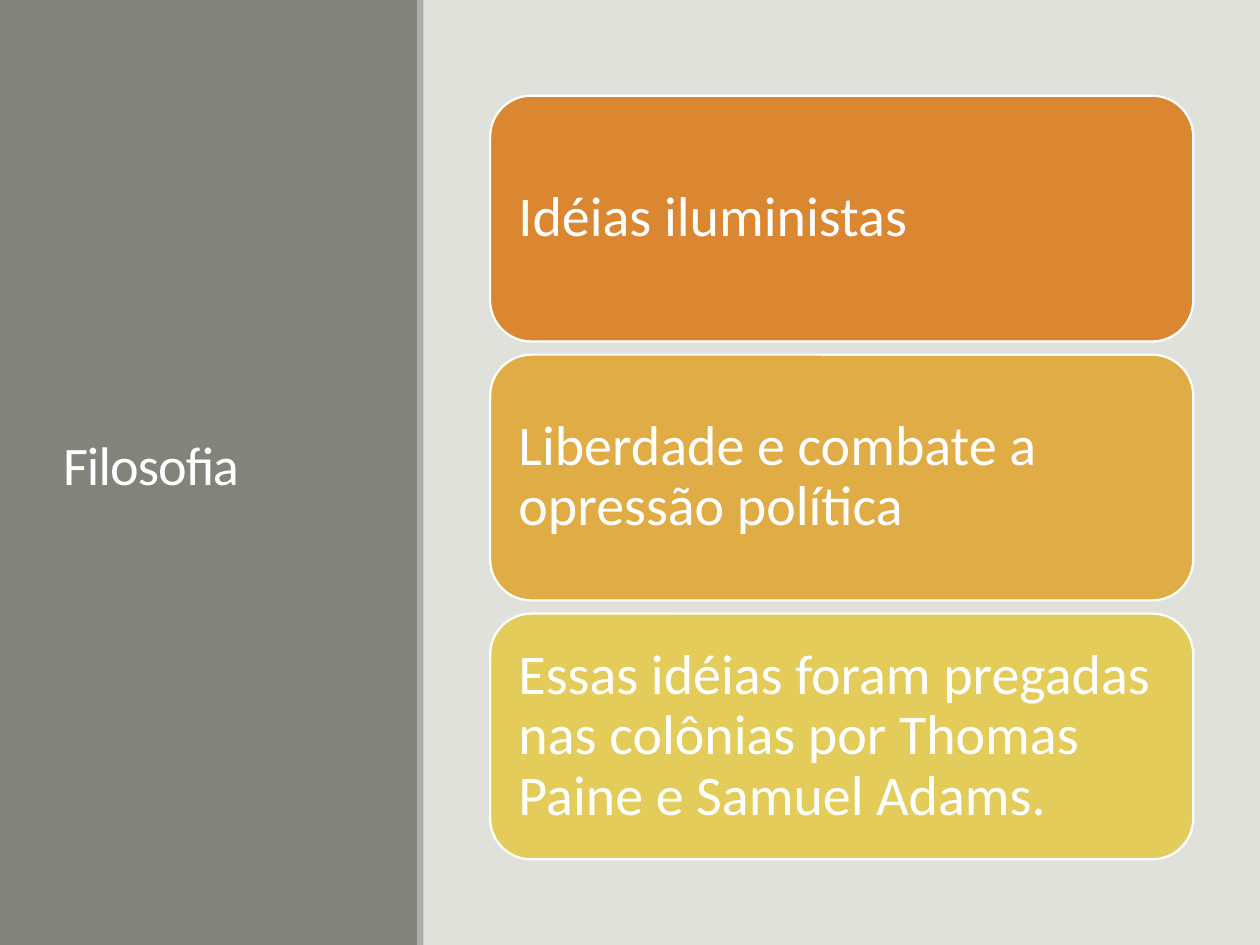
from pptx import Presentation
from pptx.dml.color import RGBColor
from pptx.enum.shapes import MSO_SHAPE
from pptx.enum.text import MSO_ANCHOR, MSO_AUTO_SIZE, PP_ALIGN
from pptx.util import Inches, Pt

WHITE = RGBColor(0xFF, 0xFF, 0xFF)
PAPER = RGBColor(0xE1, 0xE1, 0xDB)
STONE = RGBColor(0x82, 0x84, 0x7C)
EDGE = RGBColor(0xAC, 0xAD, 0xA8)
ORANGE = RGBColor(0xDB, 0x86, 0x31)
AMBER = RGBColor(0xDF, 0xAC, 0x45)
YELLOW = RGBColor(0xE3, 0xCC, 0x5A)

TITLE = "Filosofia"
IDEAS = [
    ("Idéias iluministas", ORANGE),
    ("Liberdade e combate a opressão política", AMBER),
    ("Essas idéias foram pregadas nas colônias por Thomas Paine e Samuel Adams.", YELLOW),
]

SLIDE_W, SLIDE_H = 10, 7.5
SIDEBAR_W, EDGE_W = 3.32, 0.05
CARD_LEFT, CARD_TOP, CARD_W, CARD_H = 3.89, 0.76, 5.58, 1.95
CARD_GAP = 0.105
CARD_INSET = Inches(0.13)


def add_block(slide, preset, left, top, width, height, color):
    block = slide.shapes.add_shape(
        preset, Inches(left), Inches(top), Inches(width), Inches(height))
    block.shadow.inherit = False
    block.fill.solid()
    block.fill.fore_color.rgb = color
    block.line.fill.background()
    return block


def write(frame, text, size, line_spacing):
    frame.word_wrap = True
    frame.auto_size = MSO_AUTO_SIZE.NONE
    frame.vertical_anchor = MSO_ANCHOR.MIDDLE
    paragraph = frame.paragraphs[0]
    paragraph.alignment = PP_ALIGN.LEFT
    paragraph.line_spacing = line_spacing
    run = paragraph.add_run()
    run.text = text
    run.font.name = "Calibri"
    run.font.size = Pt(size)
    run.font.color.rgb = WHITE
    return run


def add_sidebar(slide):
    add_block(slide, MSO_SHAPE.RECTANGLE, 0, 0, SIDEBAR_W, SLIDE_H, STONE)
    heading = slide.shapes.title
    heading.left, heading.top = Inches(0.4), Inches(0.57)
    heading.width, heading.height = Inches(2.53), Inches(6.31)
    run = write(heading.text_frame, TITLE, 31, 0.85)
    run._r.get_or_add_rPr().set("spc", "-50")
    slide.shapes._spTree.append(heading._element)
    add_block(slide, MSO_SHAPE.RECTANGLE, SIDEBAR_W - 0.01, 0, EDGE_W, SLIDE_H, EDGE)


def add_card(slide, row, text, color):
    top = CARD_TOP + row * (CARD_H + CARD_GAP)
    card = add_block(slide, MSO_SHAPE.ROUNDED_RECTANGLE,
                     CARD_LEFT, top, CARD_W, CARD_H, color)
    card.line.color.rgb = WHITE
    card.line.width = Pt(1.25)
    frame = card.text_frame
    frame.margin_left = frame.margin_right = CARD_INSET
    frame.margin_top = frame.margin_bottom = CARD_INSET
    write(frame, text, 32, 0.9)


def main():
    deck = Presentation()
    deck.slide_width, deck.slide_height = Inches(SLIDE_W), Inches(SLIDE_H)
    slide = deck.slides.add_slide(deck.slide_layouts[5])
    slide.background.fill.solid()
    slide.background.fill.fore_color.rgb = PAPER
    add_sidebar(slide)
    for row, (text, color) in enumerate(IDEAS):
        add_card(slide, row, text, color)
    deck.save("out.pptx")


if __name__ == "__main__":
    main()
